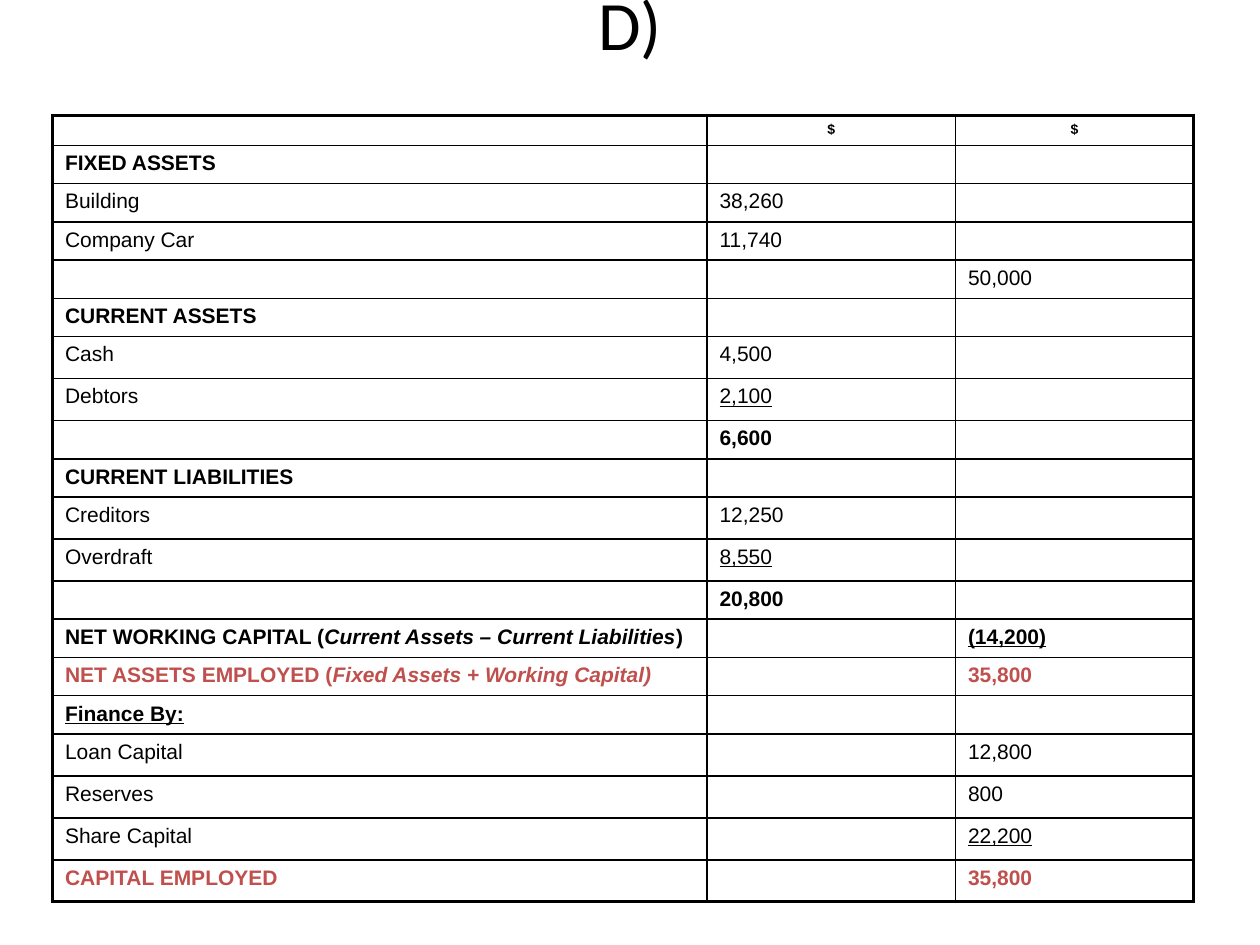
"""Build a balance sheet slide with a titled, bordered table."""
from dataclasses import dataclass

from lxml import etree
from pptx import Presentation
from pptx.dml.color import RGBColor
from pptx.enum import text
from pptx.oxml import ns
from pptx.util import Pt

BLACK = RGBColor(0x00, 0x00, 0x00)
RED = RGBColor(0xC0, 0x50, 0x4D)
THIN, THICK = Pt(1), Pt(2.25)
HEADER, SHORT, TALL = 16.8, 21.6, 24
COLUMN_WIDTHS = (374, 142, 136)
LEFT, TOP = 30, 66


@dataclass(frozen=True)
class Span:
    text: str
    bold: bool = False
    italic: bool = False
    underline: bool = False
    color: RGBColor = BLACK


@dataclass(frozen=True)
class Entry:
    label: tuple[Span, ...] = ()
    detail: tuple[Span, ...] = ()
    total: tuple[Span, ...] = ()
    height: float = SHORT
    size: float = 12
    align: text.PP_ALIGN = text.PP_ALIGN.LEFT


def plain(words: str) -> tuple[Span, ...]:
    return (Span(words),)


def bold(words: str, color: RGBColor = BLACK) -> tuple[Span, ...]:
    return (Span(words, bold=True, color=color),)


def under(words: str, heavy: bool = False) -> tuple[Span, ...]:
    return (Span(words, bold=heavy, underline=True),)


ENTRIES = (
    Entry((), bold("$"), bold("$"), HEADER, 8, text.PP_ALIGN.CENTER),
    Entry(bold("FIXED ASSETS")),
    Entry(plain("Building"), plain("38,260")),
    Entry(plain("Company Car"), plain("11,740")),
    Entry(total=plain("50,000")),
    Entry(bold("CURRENT ASSETS")),
    Entry(plain("Cash"), plain("4,500"), height=TALL),
    Entry(plain("Debtors"), under("2,100"), height=TALL),
    Entry(detail=bold("6,600")),
    Entry(bold("CURRENT LIABILITIES")),
    Entry(plain("Creditors"), plain("12,250"), height=TALL),
    Entry(plain("Overdraft"), under("8,550"), height=TALL),
    Entry(detail=bold("20,800")),
    Entry(
        bold("NET WORKING CAPITAL (")
        + (Span("Current Assets – Current Liabilities", bold=True, italic=True),)
        + bold(")"),
        total=under("(14,200)", heavy=True),
    ),
    Entry(
        bold("NET ASSETS EMPLOYED (", RED)
        + (Span("Fixed Assets + Working Capital)", bold=True, italic=True, color=RED),),
        total=bold("35,800", RED),
    ),
    Entry(under("Finance By:", heavy=True)),
    Entry(plain("Loan Capital"), total=plain("12,800"), height=TALL),
    Entry(plain("Reserves"), total=plain("800"), height=TALL),
    Entry(plain("Share Capital"), total=under("22,200"), height=TALL),
    Entry(bold("CAPITAL EMPLOYED", RED), total=bold("35,800", RED), height=TALL),
)


def add_title(page, words: str) -> None:
    title = page.shapes.title
    title.left, title.top, title.width, title.height = Pt(36), Pt(0), Pt(648), Pt(26)
    frame = title.text_frame
    frame.text = words
    frame.auto_size = text.MSO_AUTO_SIZE.NONE
    frame.vertical_anchor = text.MSO_ANCHOR.MIDDLE
    para = frame.paragraphs[0]
    para.alignment = text.PP_ALIGN.CENTER
    font = para.runs[0].font
    font.name, font.size = "Calibri", Pt(39.6)
    font.color.rgb = BLACK


def set_borders(cell, widths: dict[str, int]) -> None:
    properties = cell._tc.get_or_add_tcPr()
    for side, width in widths.items():
        line = etree.SubElement(properties, ns.qn(f"a:ln{side}"), w=str(int(width)))
        fill = etree.SubElement(line, ns.qn("a:solidFill"))
        etree.SubElement(fill, ns.qn("a:srgbClr"), val=str(BLACK))


def fill_cell(cell, spans: tuple[Span, ...], entry: Entry) -> None:
    cell.fill.background()
    para = cell.text_frame.paragraphs[0]
    para.alignment = entry.align
    para.space_before = Pt(entry.size * 0.2)
    for span in spans:
        run = para.add_run()
        run.text = span.text
        font = run.font
        font.name, font.size = "Arial", Pt(entry.size)
        font.bold, font.italic, font.underline = span.bold, span.italic, span.underline
        font.color.rgb = span.color
    if not spans:
        etree.SubElement(para._p, ns.qn("a:endParaRPr"), sz=str(int(entry.size * 100)))


def add_balance_sheet(page, entries: tuple[Entry, ...]) -> None:
    height = sum(entry.height for entry in entries)
    frame = page.shapes.add_table(
        len(entries), len(COLUMN_WIDTHS),
        Pt(LEFT), Pt(TOP), Pt(sum(COLUMN_WIDTHS)), Pt(height),
    )
    table = frame.table
    table.first_row = table.horz_banding = False
    for column, width in zip(table.columns, COLUMN_WIDTHS):
        column.width = Pt(width)
    last_row, last_column = len(entries) - 1, len(COLUMN_WIDTHS) - 1
    for r, entry in enumerate(entries):
        table.rows[r].height = Pt(entry.height)
        for c, spans in enumerate((entry.label, entry.detail, entry.total)):
            cell = table.cell(r, c)
            set_borders(cell, {
                "L": THICK if c == 0 else THIN,
                "R": THICK if c == last_column else THIN,
                "T": THICK if r == 0 else THIN,
                "B": THICK if r == last_row else THIN,
            })
            fill_cell(cell, spans, entry)


def main() -> None:
    deck = Presentation()
    deck.slide_width, deck.slide_height = Pt(720), Pt(540)
    page = deck.slides.add_slide(deck.slide_layouts.get_by_name("Title Only"))
    add_title(page, "D)")
    add_balance_sheet(page, ENTRIES)
    deck.save("out.pptx")


if __name__ == "__main__":
    main()
